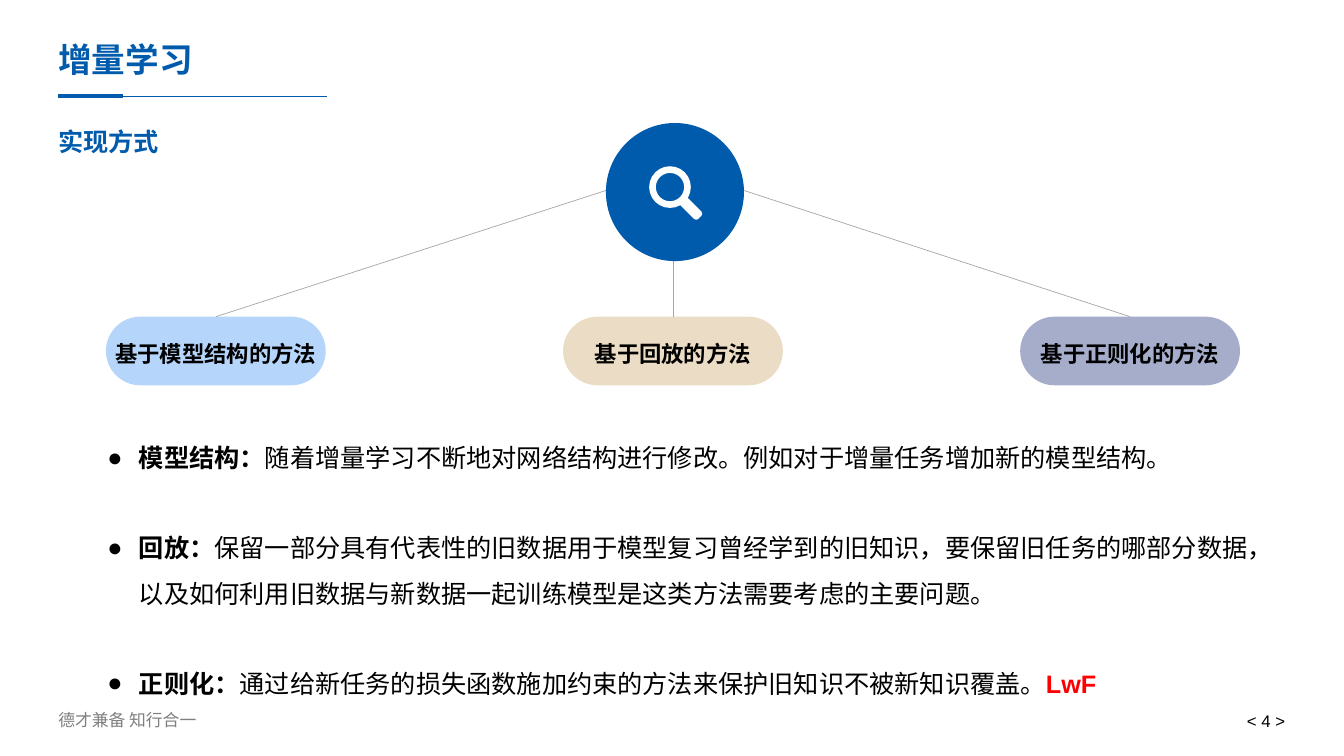
from dataclasses import dataclass

from lxml import etree
from pptx import Presentation
from pptx.dml.color import RGBColor
from pptx.enum.shapes import MSO_CONNECTOR, MSO_SHAPE
from pptx.enum.text import MSO_ANCHOR, PP_ALIGN
from pptx.oxml.ns import qn
from pptx.util import Cm, Pt

STRAIGHT = MSO_CONNECTOR.STRAIGHT
OVAL, DONUT, ROUNDED = MSO_SHAPE.OVAL, MSO_SHAPE.DONUT, MSO_SHAPE.ROUNDED_RECTANGLE
TOP, MIDDLE = MSO_ANCHOR.TOP, MSO_ANCHOR.MIDDLE
LEFT, CENTER, RIGHT = PP_ALIGN.LEFT, PP_ALIGN.CENTER, PP_ALIGN.RIGHT
TOP_SITE = 0


@dataclass(frozen=True)
class Theme:
    blue: str = "005BAC"
    black: str = "000000"
    white: str = "FFFFFF"
    red: str = "FF0000"
    footer: str = "808080"
    link: str = "A6A6A6"
    latin: str = "Arial"
    chinese: str = "Noto Sans CJK SC"
    title: int = 24
    body: int = 18
    label: int = 16
    small: int = 12


THEME = Theme()

METHODS = [
    ("基于模型结构的方法", "B5D5FB"),
    ("基于回放的方法", "EBDDC5"),
    ("基于正则化的方法", "A5ADCB"),
]
EXPLANATIONS = [
    ("模型结构：", "随着增量学习不断地对网络结构进行修改。例如对于增量任务增加新的模型结构。", ""),
    ("回放：", "保留一部分具有代表性的旧数据用于模型复习曾经学到的旧知识，要保留旧任务的哪部分数据，"
     "以及如何利用旧数据与新数据一起训练模型是这类方法需要考虑的主要问题。", ""),
    ("正则化：", "通过给新任务的损失函数施加约束的方法来保护旧知识不被新知识覆盖。", "LwF"),
]

PILL_LEFT, PILL_TOP, PILL_STEP = 2.67, 7.98, 11.52
PILL_WIDTH, PILL_HEIGHT = 5.54, 1.73
HUB_LEFT, HUB_TOP, HUB_SIZE = 15.27, 3.1, 3.48


def add_run(paragraph, text, size, color=THEME.black, bold=False, latin=THEME.latin):
    run = paragraph.add_run()
    run.text = text
    run.font.size = Pt(size)
    run.font.bold = bold
    run.font.color.rgb = RGBColor.from_string(color)
    run.font.name = latin
    east_asian = etree.SubElement(run.font._element, qn("a:ea"))
    east_asian.set("typeface", THEME.chinese)


def add_text(slide, text, left, top, width, height, *, size, color=THEME.black,
             bold=False, align=LEFT, anchor=MIDDLE, spacing=1.0):
    box = slide.shapes.add_textbox(Cm(left), Cm(top), Cm(width), Cm(height))
    frame = box.text_frame
    frame.word_wrap = True
    frame.vertical_anchor = anchor
    paragraph = frame.paragraphs[0]
    paragraph.alignment = align
    paragraph.line_spacing = spacing
    if text:
        add_run(paragraph, text, size, color, bold)
    return frame


def add_filled(slide, kind, left, top, width, height, color):
    shape = slide.shapes.add_shape(kind, Cm(left), Cm(top), Cm(width), Cm(height))
    shape.shadow.inherit = False
    shape.fill.solid()
    shape.fill.fore_color.rgb = RGBColor.from_string(color)
    shape.line.fill.background()
    return shape


def add_line(slide, start, end, color, weight):
    line = slide.shapes.add_connector(STRAIGHT, *map(Cm, start + end))
    line.line.color.rgb = RGBColor.from_string(color)
    line.line.width = Pt(weight)
    etree.SubElement(line._element.spPr, qn("a:effectLst"))
    return line


def add_pill(slide, label, left, color):
    pill = add_filled(slide, ROUNDED, left, PILL_TOP, PILL_WIDTH, PILL_HEIGHT, color)
    pill.adjustments[0] = 0.5
    frame = pill.text_frame
    frame.word_wrap = False
    frame.vertical_anchor = MIDDLE
    frame.margin_left = frame.margin_right = frame.margin_top = frame.margin_bottom = 0
    paragraph = frame.paragraphs[0]
    paragraph.alignment = CENTER
    paragraph.line_spacing = 1.2
    add_run(paragraph, label, THEME.label, bold=True, latin=THEME.chinese)
    return pill


def add_search_hub(slide):
    add_filled(slide, OVAL, HUB_LEFT, HUB_TOP, HUB_SIZE, HUB_SIZE, THEME.blue)
    lens = add_filled(slide, DONUT, 16.36, 4.19, 1.05, 1.05, THEME.white)
    lens.adjustments[0] = 0.16
    handle = add_filled(slide, ROUNDED, 17.09, 5.12, 0.64, 0.26, THEME.white)
    handle.adjustments[0] = 0.3
    handle.rotation = 45


def add_method_tree(slide):
    """Three method pills, each linked to the search hub above them."""
    side = 4.8
    middle = PILL_LEFT + PILL_STEP + PILL_WIDTH / 2
    starts = [(HUB_LEFT, side), (middle, HUB_TOP + HUB_SIZE), (HUB_LEFT + HUB_SIZE, side)]
    for index, ((label, color), start) in enumerate(zip(METHODS, starts)):
        left = PILL_LEFT + index * PILL_STEP
        pill = add_pill(slide, label, left, color)
        link = add_line(slide, start, (left + PILL_WIDTH / 2, PILL_TOP), THEME.link, 0.5)
        link.end_connect(pill, TOP_SITE)
    add_search_hub(slide)


def add_bullet(paragraph, indent):
    properties = paragraph._p.get_or_add_pPr()
    properties.set("marL", str(indent))
    properties.set("indent", str(-indent))
    etree.SubElement(properties, qn("a:buFont")).set("typeface", THEME.latin)
    etree.SubElement(properties, qn("a:buChar")).set("char", "●")


def add_explanations(slide):
    frame = add_text(slide, "", 2.46, 10.64, 30.18, 7.19, size=THEME.body, anchor=TOP)
    for index, (term, detail, example) in enumerate(EXPLANATIONS):
        paragraph = frame.add_paragraph() if index else frame.paragraphs[0]
        add_bullet(paragraph, Cm(0.79))
        paragraph.line_spacing = 1.5
        if index:
            paragraph.space_before = Pt(32)
        add_run(paragraph, term, THEME.body, bold=True)
        add_run(paragraph, detail, THEME.body)
        if example:
            add_run(paragraph, example, THEME.body, THEME.red, bold=True)


def add_heading(slide):
    rule_left, rule_top = 1.47, 2.42
    for right, weight in ((8.23, 0.5), (3.1, 3)):
        add_line(slide, (rule_left, rule_top), (right, rule_top), THEME.blue, weight)
    for text, top, size in (("增量学习", 0.69, THEME.title), ("实现方式", 2.74, THEME.body)):
        add_text(slide, text, 1.22, top, 25.15, 1.73, size=size, color=THEME.blue,
                 bold=True, spacing=0.9)


def add_footer(slide):
    add_text(slide, "德才兼备 知行合一", 1.22, 17.75, 4.4, 0.76, size=THEME.small,
             color=THEME.footer, anchor=TOP)
    add_text(slide, "< 4 >", 25.02, 17.75, 7.62, 0.81, size=THEME.small, align=RIGHT)


def main():
    presentation = Presentation()
    presentation.slide_width, presentation.slide_height = Cm(33.87), Cm(19.05)
    slide = presentation.slides.add_slide(presentation.slide_layouts[6])
    add_heading(slide)
    add_method_tree(slide)
    add_explanations(slide)
    add_footer(slide)
    presentation.save("out.pptx")


if __name__ == "__main__":
    main()
